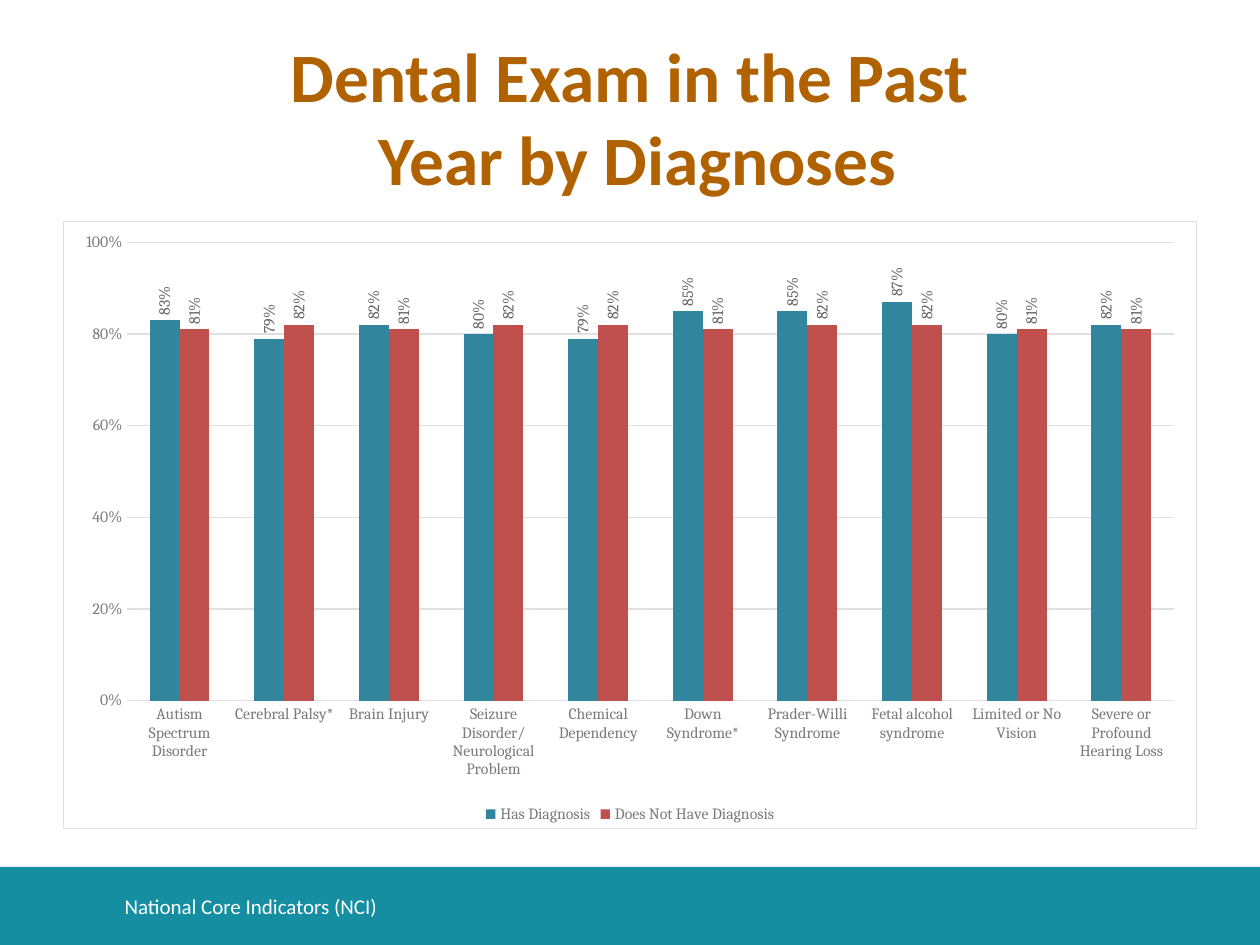
import lxml.etree
import pptx
import pptx.chart.data
import pptx.dml.color
import pptx.enum.chart
import pptx.enum.shapes
import pptx.enum.text
import pptx.oxml
import pptx.oxml.ns
import pptx.util
from pptx.util import Inches, Pt

TITLE = "Dental Exam in the Past\v Year by Diagnoses"
FOOTER = "National Core Indicators (NCI)"
SERIES_NAMES = ("Has Diagnosis", "Does Not Have Diagnosis")
DIAGNOSES = [
    ("Autism Spectrum Disorder", 0.83, 0.81),
    ("Cerebral Palsy*", 0.79, 0.82),
    ("Brain Injury", 0.82, 0.81),
    ("Seizure Disorder/Neurological Problem", 0.80, 0.82),
    ("Chemical Dependency", 0.79, 0.82),
    ("Down Syndrome*", 0.85, 0.81),
    ("Prader-Willi Syndrome", 0.85, 0.82),
    ("Fetal alcohol syndrome", 0.87, 0.82),
    ("Limited or No Vision", 0.80, 0.81),
    ("Severe or Profound Hearing Loss", 0.82, 0.81),
]

THEME = {
    "band": "168EA2",
    "series": ("31859C", "C0504D"),
    "rule": "E0E0E0",
    "rule_width": 0.75,
    "paper": "FFFFFF",
    "title": {"name": "Calibri", "size": 39.6, "bold": True, "color": "B06100"},
    "footer": {"name": "Calibri", "size": 12, "color": "FFFFFF"},
    "chart": {"name": "Cambria", "size": 10, "color": "333333"},
    "axis": {"name": "Cambria", "size": 9, "color": "7A7A7A"},
    "label": {"name": "Cambria", "size": 9, "color": "666666"},
}


def rgb(value):
    return pptx.dml.color.RGBColor.from_string(value)


def set_values(target, values):
    for name, value in values.items():
        setattr(target, name, value)


def set_font(font, style):
    for name, value in style.items():
        if name == "color":
            font.color.rgb = rgb(value)
        else:
            setattr(font, name, Pt(value) if name == "size" else value)


def set_rule(line):
    line.color.rgb = rgb(THEME["rule"])
    line.width = Pt(THEME["rule_width"])


def add_text(slide, text, box, style, alignment):
    frame = slide.shapes.add_textbox(*map(Inches, box)).text_frame
    set_values(frame, {
        "word_wrap": True,
        "vertical_anchor": pptx.enum.text.MSO_ANCHOR.MIDDLE,
    })
    paragraph = frame.paragraphs[0]
    paragraph.text = text
    paragraph.alignment = alignment
    for run in paragraph.runs:
        set_font(run.font, style)


def add_band(slide):
    band = slide.shapes.add_shape(
        pptx.enum.shapes.MSO_SHAPE.RECTANGLE,
        *map(Inches, (0, 6.88, 10, 0.62)))
    band.shadow.inherit = False
    band.fill.solid()
    band.fill.fore_color.rgb = rgb(THEME["band"])
    band.line.fill.background()


def frame_chart(chart):
    """Give the whole chart area a fill and a thin border."""
    width = Pt(THEME["rule_width"])
    area = pptx.oxml.parse_xml(
        f'<c:spPr {pptx.oxml.ns.nsdecls("c", "a")}>'
        f'<a:solidFill><a:srgbClr val="{THEME["paper"]}"/></a:solidFill>'
        f'<a:ln w="{width}"><a:solidFill><a:srgbClr val="{THEME["rule"]}"/>'
        '</a:solidFill></a:ln></c:spPr>')
    chart._chartSpace.find(pptx.oxml.ns.qn("c:chart")).addnext(area)


def style_series(series, color):
    series.format.fill.solid()
    series.format.fill.fore_color.rgb = rgb(color)
    series.invert_if_negative = False
    labels = series.data_labels
    set_values(labels, {
        "show_value": True,
        "number_format": "0%",
        "number_format_is_linked": False,
        "position": pptx.enum.chart.XL_LABEL_POSITION.OUTSIDE_END,
    })
    set_font(labels.font, THEME["label"])
    body = next(labels._element.iter(pptx.oxml.ns.qn("a:bodyPr")))
    body.set("rot", "-5400000")
    body.set("vert", "horz")


def style_axes(chart):
    no_tick = pptx.enum.chart.XL_TICK_MARK.NONE
    for axis in (chart.category_axis, chart.value_axis):
        set_values(axis, {"major_tick_mark": no_tick, "minor_tick_mark": no_tick})
        set_font(axis.tick_labels.font, THEME["axis"])
    set_rule(chart.category_axis.format.line)
    value_axis = chart.value_axis
    set_values(value_axis, {
        "minimum_scale": 0,
        "maximum_scale": 1,
        "major_unit": 0.2,
        "has_major_gridlines": True,
    })
    set_values(value_axis.tick_labels, {
        "number_format": "0%",
        "number_format_is_linked": False,
    })
    value_axis.format.line.fill.background()
    set_rule(value_axis.major_gridlines.format.line)


def add_diagnosis_chart(slide):
    categories, *columns = zip(*DIAGNOSES)
    data = pptx.chart.data.CategoryChartData(number_format="0%")
    data.categories = categories
    for name, values in zip(SERIES_NAMES, columns):
        data.add_series(name, values)
    chart = slide.shapes.add_chart(
        pptx.enum.chart.XL_CHART_TYPE.COLUMN_CLUSTERED,
        *map(Inches, (0.5, 1.75, 9, 4.83)), data).chart
    set_font(chart.font, THEME["chart"])
    set_values(chart, {"has_title": False, "has_legend": True})
    set_values(chart.legend, {
        "position": pptx.enum.chart.XL_LEGEND_POSITION.BOTTOM,
        "include_in_layout": False,
    })
    set_font(chart.legend.font, THEME["axis"])
    plot = chart.plots[0]
    set_values(plot, {"gap_width": 150, "overlap": 0, "vary_by_categories": False})
    for series, color in zip(plot.series, THEME["series"]):
        style_series(series, color)
    style_axes(chart)
    frame_chart(chart)


def main():
    presentation = pptx.Presentation()
    set_values(presentation, {"slide_width": Inches(10), "slide_height": Inches(7.5)})
    slide = presentation.slides.add_slide(presentation.slide_layouts[6])
    align = pptx.enum.text.PP_ALIGN
    add_band(slide)
    add_text(slide, TITLE, (0.5, 0.3, 9, 1.25), THEME["title"], align.CENTER)
    add_diagnosis_chart(slide)
    add_text(slide, FOOTER, (0.89, 6.99, 7.4, 0.4), THEME["footer"], align.LEFT)
    presentation.save("out.pptx")


if __name__ == "__main__":
    main()
